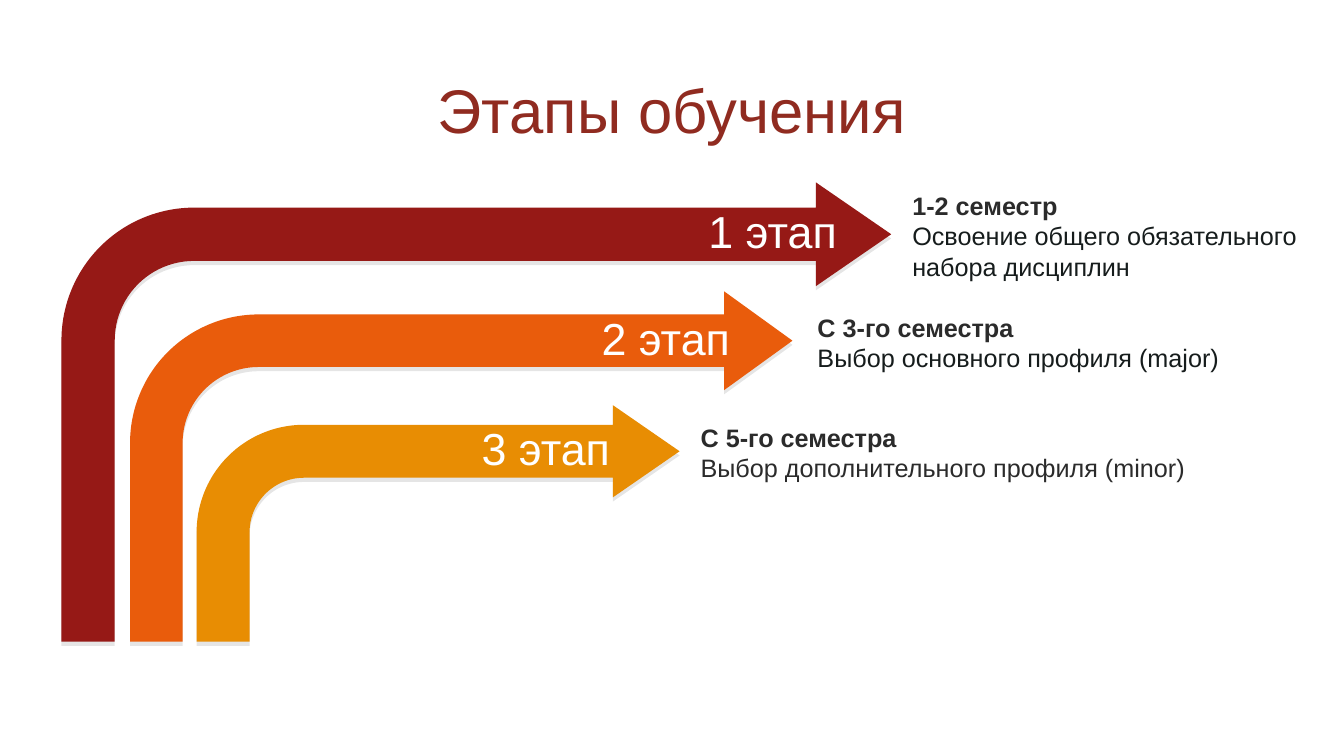
from pptx import Presentation
from pptx.dml.color import RGBColor
from pptx.enum.shapes import MSO_SHAPE
from pptx.enum.text import MSO_ANCHOR, MSO_AUTO_SIZE, PP_ALIGN
from pptx.oxml import parse_xml
from pptx.oxml.ns import nsdecls, qn
from pptx.util import Inches, Pt

# Content: positions in inches, arrow bends as bentArrow adjustments
TITLE = "Этапы обучения"
STAGES = [
    {"label": "1 этап", "period": "1-2 семестр",
     "goal": "Освоение общего обязательного набора дисциплин",
     "color": "961916", "goal_color": "161C1C",
     "left": 0.61, "top": 1.81, "tip": 8.84, "bend": (0.116, 0.113, 0.164, 0.289),
     "label_right": 8.40, "note": (8.95, 4.39, 1.01)},
    {"label": "2 этап", "period": "С 3-го семестра",
     "goal": "Выбор основного профиля (major)",
     "color": "E95C0C", "goal_color": "161C1C",
     "left": 1.29, "top": 2.89, "tip": 7.86, "bend": (0.15, 0.141, 0.195, 0.367),
     "label_right": 7.34, "note": (8.01, 4.37, 0.71)},
    {"label": "3 этап", "period": "С 5-го семестра",
     "goal": "Выбор дополнительного профиля (minor)",
     "color": "E88D03", "goal_color": "2B2B2B",
     "left": 1.95, "top": 4.02, "tip": 6.74, "bend": (0.224, 0.195, 0.282, 0.454),
     "label_right": 6.15, "note": (6.85, 5.19, 0.71)},
]
THEME = {
    "font": "Arial",
    "title": {"size": 44, "color": "902B20"},
    "label": {"size": 32, "color": "FFFFFF"},
    "note": {"size": 18, "color": "2B2B2B"},
}
ARROW_BOTTOM = 6.365
LABEL_SIZE = (2.96, 0.64)
LABEL_SHIFT, NOTE_SHIFT = -0.03, 0.02  # text centres relative to the arrow axis


def write(paragraph, text, style, color=None, bold=False):
    run = paragraph.add_run()
    run.text = text
    formats = {"name": THEME["font"], "size": Pt(style["size"]), "bold": bold}
    for attribute, value in formats.items():
        setattr(run.font, attribute, value)
    run.font.color.rgb = RGBColor.from_string(color or style["color"])


def add_text_frame(slide, left, centre, width, height):
    box = slide.shapes.add_textbox(
        *map(Inches, (left, centre - height / 2, width, height)))
    box.text_frame.word_wrap = True
    box.text_frame.auto_size = MSO_AUTO_SIZE.SHAPE_TO_FIT_TEXT
    return box.text_frame


def add_arrow(slide, stage):
    """Draw a bent arrow and return its height."""
    height = ARROW_BOTTOM - stage["top"]
    arrow = slide.shapes.add_shape(MSO_SHAPE.BENT_ARROW, *map(Inches, (
        stage["left"], stage["top"], stage["tip"] - stage["left"], height)))
    for index, value in enumerate(stage["bend"]):
        arrow.adjustments[index] = value
    arrow.fill.solid()
    arrow.fill.fore_color.rgb = RGBColor.from_string(stage["color"])
    arrow.line.fill.background()
    # Soft shadow straight below
    arrow.shadow.inherit = False
    arrow.element.spPr.find(qn("a:effectLst")).append(parse_xml(
        f'<a:outerShdw {nsdecls("a")} blurRad="0" dist="{Pt(3)}" dir="5400000" '
        'algn="t" rotWithShape="0"><a:srgbClr val="000000">'
        '<a:alpha val="10000"/></a:srgbClr></a:outerShdw>'))
    return height


def main():
    prs = Presentation()
    prs.slide_width, prs.slide_height = Inches(13.33), Inches(7.5)
    slide = prs.slides.add_slide(prs.slide_layouts[5])

    # Title
    title = slide.shapes.title
    place = {"left": 1, "top": 0.68, "width": 11.33, "height": 0.89}
    for attribute, value in place.items():
        setattr(title, attribute, Inches(value))
    frame = title.text_frame
    frame_formats = {"margin_left": 0, "margin_top": 0, "margin_right": 0,
                     "margin_bottom": 0, "vertical_anchor": MSO_ANCHOR.MIDDLE,
                     "auto_size": MSO_AUTO_SIZE.NONE, "word_wrap": True}
    for attribute, value in frame_formats.items():
        setattr(frame, attribute, value)
    heading = frame.paragraphs[0]
    heading.alignment = PP_ALIGN.CENTER
    heading.line_spacing = 0.9
    write(heading, TITLE, THEME["title"])

    # Arrows, from the outer to the inner
    heights = [add_arrow(slide, stage) for stage in STAGES]

    # Notes and labels, set along each arrow's axis
    for stage, height in zip(STAGES, heights):
        axis = stage["top"] + stage["bend"][1] * height

        note_left, *note_size = stage["note"]
        note = add_text_frame(slide, note_left, axis + NOTE_SHIFT, *note_size)
        write(note.paragraphs[0], stage["period"], THEME["note"], bold=True)
        write(note.add_paragraph(), stage["goal"], THEME["note"], stage["goal_color"])

        label_left = stage["label_right"] - LABEL_SIZE[0]
        label = add_text_frame(slide, label_left, axis + LABEL_SHIFT, *LABEL_SIZE)
        label.paragraphs[0].alignment = PP_ALIGN.RIGHT
        write(label.paragraphs[0], stage["label"], THEME["label"])

    prs.save("out.pptx")


if __name__ == "__main__":
    main()
